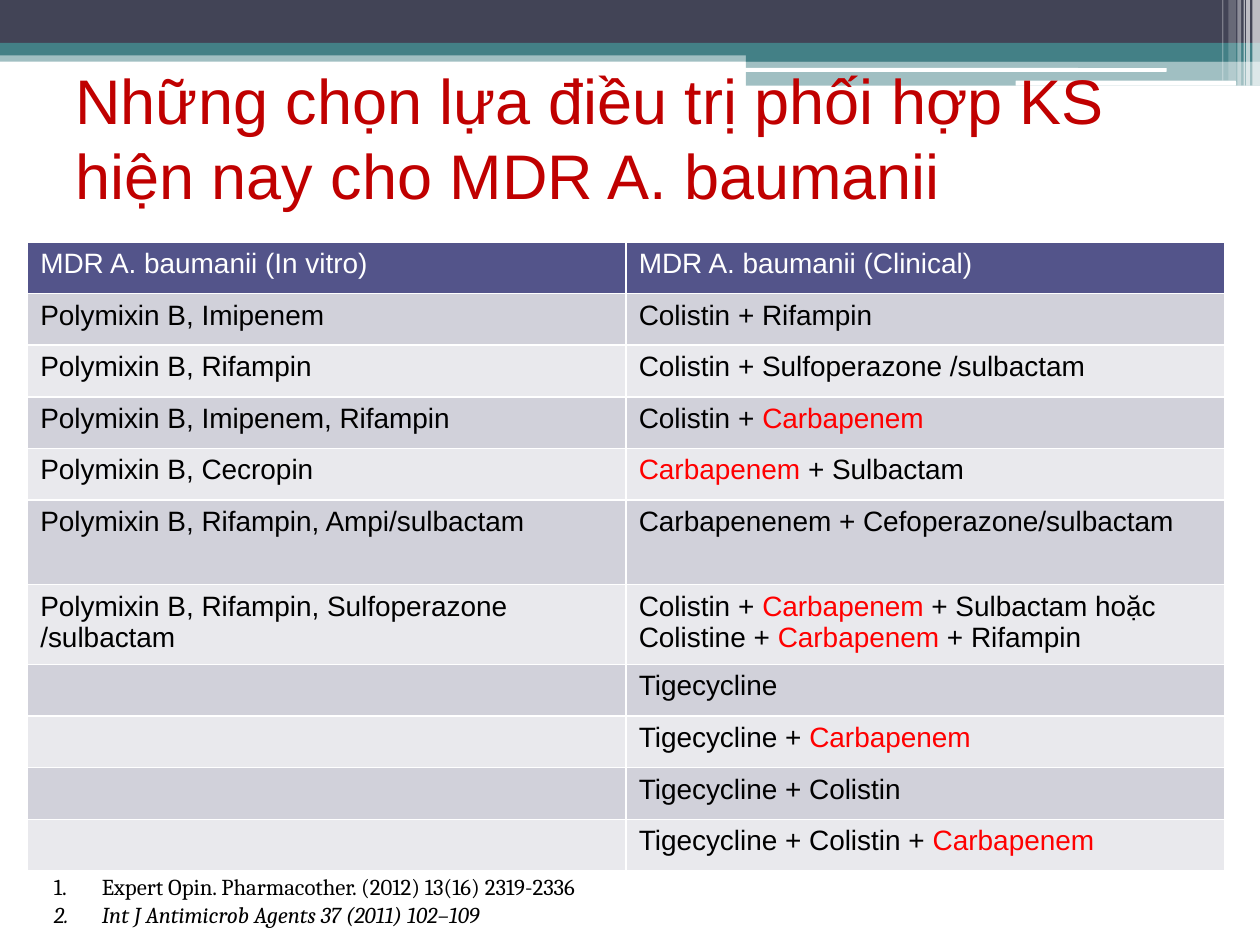
"""Build a slide listing combination therapies for MDR A. baumanii."""
from lxml import etree
from pptx import Presentation
from pptx.dml.color import RGBColor
from pptx.enum import shapes, text
from pptx.oxml import ns
from pptx.util import Inches, Pt

WHITE = RGBColor(0xFF, 0xFF, 0xFF)
BLACK = RGBColor(0x00, 0x00, 0x00)
RED = RGBColor(0xFF, 0x00, 0x00)
TITLE_RED = RGBColor(0xC0, 0x00, 0x00)
SLATE = RGBColor(0x42, 0x44, 0x56)
TEAL = RGBColor(0x43, 0x80, 0x86)
INDIGO = RGBColor(0x53, 0x54, 0x8A)
DARK_BAND = RGBColor(0xD1, 0xD1, 0xDA)
LIGHT_BAND = RGBColor(0xE9, 0xE9, 0xED)
KEY_DRUG = "Carbapenem"
RECT = shapes.MSO_SHAPE.RECTANGLE
ROUNDED = shapes.MSO_SHAPE.ROUNDED_RECTANGLE


def add_span(para, words, color, **formats):
    span = para.add_run()
    span.text = words
    for name, value in formats.items():
        setattr(span.font, name, value)
    span.font.color.rgb = color


def add_box(page, left, top, width, height):
    box = page.shapes.add_textbox(Inches(left), Inches(top), Inches(width), Inches(height))
    box.text_frame.word_wrap = True
    return box.text_frame


deck = Presentation()
deck.slide_width, deck.slide_height = Inches(10), Inches(7.5)
page = deck.slides.add_slide(deck.slide_layouts[6])

bands = [
    (RECT, 0, 0.4, 10, 0.09, TEAL, 50),
    (RECT, 0, 0, 10, 0.34, SLATE, 100),
    (RECT, 0, 0.34, 10, 0.1, TEAL, 100),
    (RECT, 5.92, 0.39, 4.08, 0.1, TEAL, 100),
    (RECT, 5.92, 0.48, 4.08, 0.2, TEAL, 50),
    (ROUNDED, 5.91, 0.54, 3.35, 0.03, WHITE, 100),
    (ROUNDED, 8.06, 0.64, 1.75, 0.04, WHITE, 100),
    (RECT, 9.94, 0, 0.06, 0.68, WHITE, 65),
    (RECT, 9.89, 0, 0.03, 0.68, WHITE, 65),
    (RECT, 9.87, 0, 0.01, 0.68, WHITE, 60),
    (RECT, 9.82, 0, 0.03, 0.68, WHITE, 40),
    (RECT, 9.75, 0, 0.06, 0.64, WHITE, 20),
    (RECT, 9.7, 0, 0.01, 0.64, WHITE, 30),
]
for kind, left, top, width, height, color, opacity in bands:
    band = page.shapes.add_shape(kind, Inches(left), Inches(top), Inches(width), Inches(height))
    band.shadow.inherit = False
    band.line.fill.background()
    band.fill.solid()
    band.fill.fore_color.rgb = color
    if opacity < 100:
        tint = band.fill._xPr.find(ns.qn("a:solidFill"))[0]
        etree.SubElement(tint, ns.qn("a:alpha"), val=str(opacity * 1000))

title = add_box(page, 0.5, 0.58, 9, 1.01)
title.vertical_anchor = text.MSO_ANCHOR.MIDDLE
add_span(title.paragraphs[0], "Những chọn lựa điều trị phối hợp KS hiện nay cho MDR A. baumanii",
         TITLE_RED, name="Arial", size=Pt(36))

rows = [
    ("MDR A. baumanii (In vitro)", "MDR A. baumanii (Clinical)"),
    ("Polymixin B, Imipenem", "Colistin + Rifampin"),
    ("Polymixin B, Rifampin", "Colistin + Sulfoperazone /sulbactam"),
    ("Polymixin B, Imipenem, Rifampin", "Colistin + Carbapenem"),
    ("Polymixin B, Cecropin", "Carbapenem + Sulbactam"),
    ("Polymixin B, Rifampin, Ampi/sulbactam", "Carbapenenem + Cefoperazone/sulbactam"),
    ("Polymixin B, Rifampin, Sulfoperazone /sulbactam",
     "Colistin + Carbapenem + Sulbactam hoặc Colistine + Carbapenem + Rifampin"),
    ("", "Tigecycline"),
    ("", "Tigecycline + Carbapenem"),
    ("", "Tigecycline + Colistin"),
    ("", "Tigecycline + Colistin + Carbapenem"),
]
tall_rows = {5: 0.67, 6: 0.63}
table = page.shapes.add_table(len(rows), 2, Inches(0.22), Inches(1.92),
                              Inches(9.5), Inches(4.96)).table
for column in table.columns:
    column.width = Inches(4.75)
for row_index, row in enumerate(rows):
    table.rows[row_index].height = Inches(tall_rows.get(row_index, 0.41))
    fill = DARK_BAND if row_index % 2 else LIGHT_BAND
    for column_index, words in enumerate(row):
        cell = table.cell(row_index, column_index)
        for side in ("lnL", "lnR", "lnT", "lnB"):
            border = etree.SubElement(cell._tc.get_or_add_tcPr(), ns.qn(f"a:{side}"), w=str(Pt(1)))
            paint = etree.SubElement(border, ns.qn("a:solidFill"))
            etree.SubElement(paint, ns.qn("a:srgbClr"), val=str(WHITE))
        cell.fill.solid()
        cell.fill.fore_color.rgb = fill if row_index else INDIGO
        para = cell.text_frame.paragraphs[0]
        formats = {"name": "Arial", "size": Pt(16), "bold": False}
        for piece_index, piece in enumerate(words.split(KEY_DRUG)):
            if piece_index:
                add_span(para, KEY_DRUG, RED, **formats)
            if piece:
                add_span(para, piece, BLACK if row_index else WHITE, **formats)

references = add_box(page, 0.33, 6.88, 9.67, 0.54)
citations = [
    ("Expert Opin. Pharmacother. (2012) 13(16) 2319-2336", False),
    ("Int J Antimicrob Agents 37 (2011) 102–109", True),
]
for index, (citation, italic) in enumerate(citations):
    para = references.add_paragraph() if index else references.paragraphs[0]
    properties = para._p.get_or_add_pPr()
    properties.set("marL", str(Inches(0.38)))
    properties.set("indent", str(-Inches(0.38)))
    etree.SubElement(properties, ns.qn("a:buFont"), typeface="+mj-lt")
    etree.SubElement(properties, ns.qn("a:buAutoNum"), type="arabicPeriod")
    add_span(para, citation, BLACK, name="Cambria", size=Pt(13), italic=italic)

deck.save("out.pptx")
